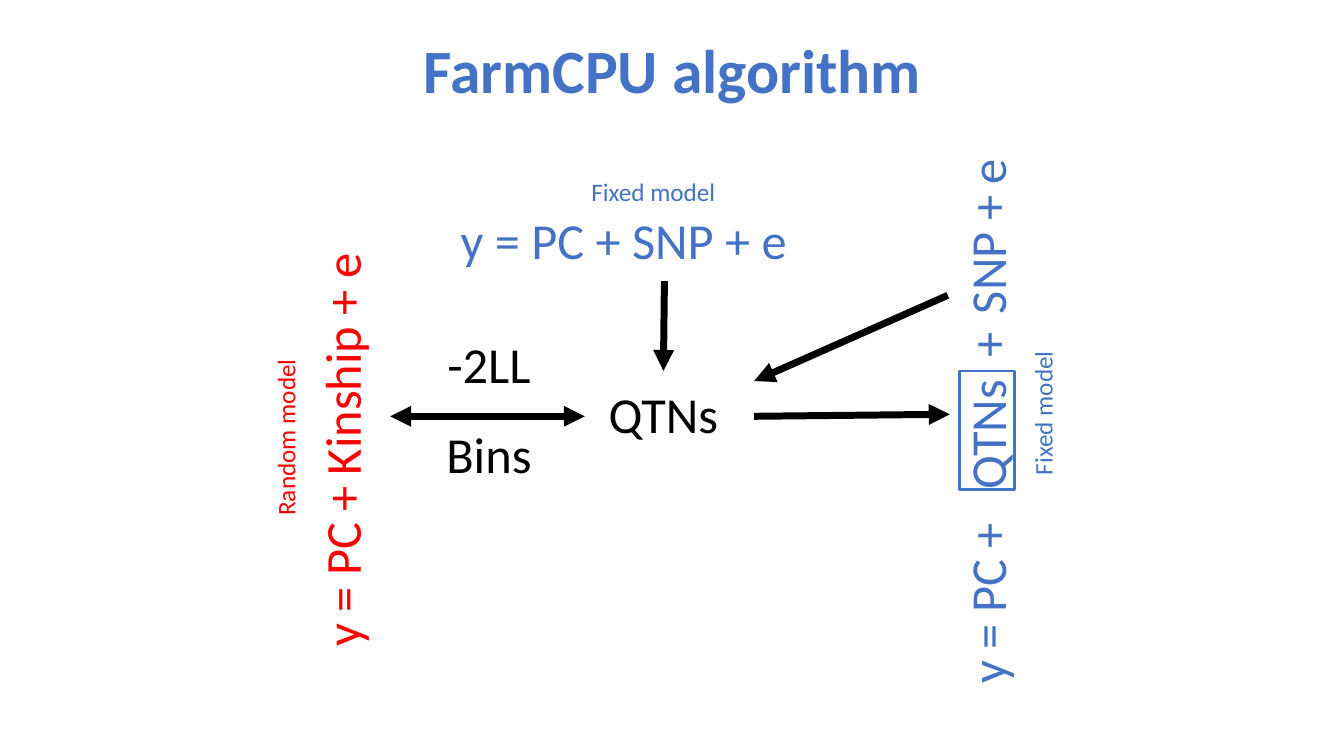
from lxml import etree
from pptx import Presentation
from pptx.dml.color import RGBColor
from pptx.enum.shapes import MSO_CONNECTOR, MSO_SHAPE
from pptx.enum.text import MSO_ANCHOR, PP_ALIGN
from pptx.oxml.ns import qn
from pptx.util import Inches, Pt

STRAIGHT = MSO_CONNECTOR.STRAIGHT
RECTANGLE = MSO_SHAPE.RECTANGLE
MIDDLE = MSO_ANCHOR.MIDDLE
LEFT, CENTER = PP_ALIGN.LEFT, PP_ALIGN.CENTER
COLORS = {"fixed": "4472C4", "random": "FF0000", "ink": "000000"}
FONT = "Calibri"
FORMULA_SIZE, CAPTION_SIZE = 36, 18
FORMULA_HEIGHT, CAPTION_HEIGHT, CAPTION_LENGTH = 0.71, 0.4, 2.22


def color(role):
    """Return the colour of a role."""
    return RGBColor.from_string(COLORS[role])


def style(run, size, role):
    """Set the font, size and colour of a run."""
    run.font.name = FONT
    run.font.size = Pt(size)
    run.font.color.rgb = color(role)


def add_label(slide, left, top, length, height, pieces, size, role, upward=False, align=CENTER):
    """Place text, upright or reading upward, by its visible corner; pieces pair text with extra spacing."""
    if upward:
        shift = (length - height) / 2
        left, top = left - shift, top + shift
    label = slide.shapes.add_textbox(Inches(left), Inches(top), Inches(length), Inches(height))
    label.rotation = 270 if upward else 0
    label.text_frame.word_wrap = True
    paragraph = label.text_frame.paragraphs[0]
    paragraph.alignment = align
    for text, spacing in pieces:
        run = paragraph.add_run()
        run.text = text
        style(run, size, role)
        if spacing:
            run.font._element.set("spc", str(round(spacing * 100)))


def add_formula(slide, left, top, length, pieces, role, **options):
    """Place a formula or a large word."""
    add_label(slide, left, top, length, FORMULA_HEIGHT, pieces, FORMULA_SIZE, role, **options)


def add_caption(slide, left, top, text, role, upward=False):
    """Place the name of a model."""
    add_label(slide, left, top, CAPTION_LENGTH, CAPTION_HEIGHT, [(text, 0)], CAPTION_SIZE, role, upward)


def add_arrow(slide, start, end, both_ways=False):
    """Draw a thick arrow between two points."""
    arrow = slide.shapes.add_connector(STRAIGHT, *[Inches(value) for value in (*start, *end)])
    arrow.line.color.rgb = color("ink")
    arrow.line.width = Pt(5)
    line = arrow.line._get_or_add_ln()
    for tag in ("a:headEnd", "a:tailEnd") if both_ways else ("a:tailEnd",):
        etree.SubElement(line, qn(tag), type="triangle")
    etree.SubElement(arrow._element.spPr, qn("a:effectLst"))


def add_title(slide, left, top, width, height):
    """Fill and place the title."""
    title = slide.shapes.title
    title.left, title.top = Inches(left), Inches(top)
    title.width, title.height = Inches(width), Inches(height)
    title.text_frame.text = "FarmCPU algorithm"
    title.text_frame.vertical_anchor = MIDDLE
    paragraph = title.text_frame.paragraphs[0]
    paragraph.alignment = CENTER
    paragraph.line_spacing = 0.9
    style(paragraph.runs[0], 44, "fixed")
    paragraph.runs[0].font.bold = True


def add_initial_model(slide, left, top, width):
    """Build the starting fixed model."""
    add_caption(slide, left + 0.9, top, "Fixed model", "fixed")
    add_formula(slide, left, top + 0.33, width, [("y = PC + SNP + e", 0)], "fixed", align=LEFT)


def add_random_model(slide, left, top, length):
    """Build the random model that reads upward."""
    add_caption(slide, left, top + 0.88, "Random model", "random", upward=True)
    add_formula(slide, left + 0.4, top, length, [("y = PC + Kinship + e", 0)], "random", upward=True)


def add_qtn_model(slide, left, top, length):
    """Build the fixed model that reads upward, with its QTNs framed."""
    pieces = [("y = PC +", 0), (" ", 16.3), ("QTNs", 0), (" ", 8.1), ("+", 0), (" ", 4.6), ("SNP + e", 0)]
    add_formula(slide, left, top, length, pieces, "fixed", upward=True, align=LEFT)
    add_caption(slide, left + 0.71, top + 1.65, "Fixed model", "fixed", upward=True)
    frame = slide.shapes.add_shape(
        RECTANGLE, Inches(left + 0.09), Inches(top + 2.34), Inches(0.54), Inches(1.18))
    frame.shadow.inherit = False
    frame.fill.background()
    frame.line.color.rgb = color("fixed")
    frame.line.width = Pt(2)


def add_exchange(slide, left, top, width):
    """Build the QTNs in the middle and the arrows that tie the models to them."""
    right, axis = left + width, top + 1.34
    add_formula(slide, left + 1.6, top + 0.96, 2.22, [("QTNs", 0)], "ink")
    for word, offset in (("-2LL", 0.47), ("Bins", 1.36)):
        add_formula(slide, left + 0.36, top + offset, 1.24, [(word, 0)], "ink")
    add_arrow(slide, (left + 2.72, top), (left + 2.71, top + 0.89))
    add_arrow(slide, (left, axis), (left + 1.93, axis), both_ways=True)
    add_arrow(slide, (left + 3.61, axis), (right, axis - 0.02))
    add_arrow(slide, (right - 0.02, top + 0.14), (left + 3.61, top + 0.99))


def main():
    """Build and save the slide."""
    deck = Presentation()
    deck.slide_width, deck.slide_height = Inches(13.33), Inches(7.5)
    slide = deck.slides.add_slide(deck.slide_layouts[5])
    add_title(slide, 0.92, 0, 11.5, 1.45)
    add_initial_model(slide, 4.47, 1.7, 4.02)
    add_random_model(slide, 2.63, 2.35, 4.23)
    add_qtn_model(slide, 9.43, 1.34, 5.54)
    add_exchange(slide, 3.87, 2.79, 5.55)
    deck.save("out.pptx")


if __name__ == "__main__":
    main()
